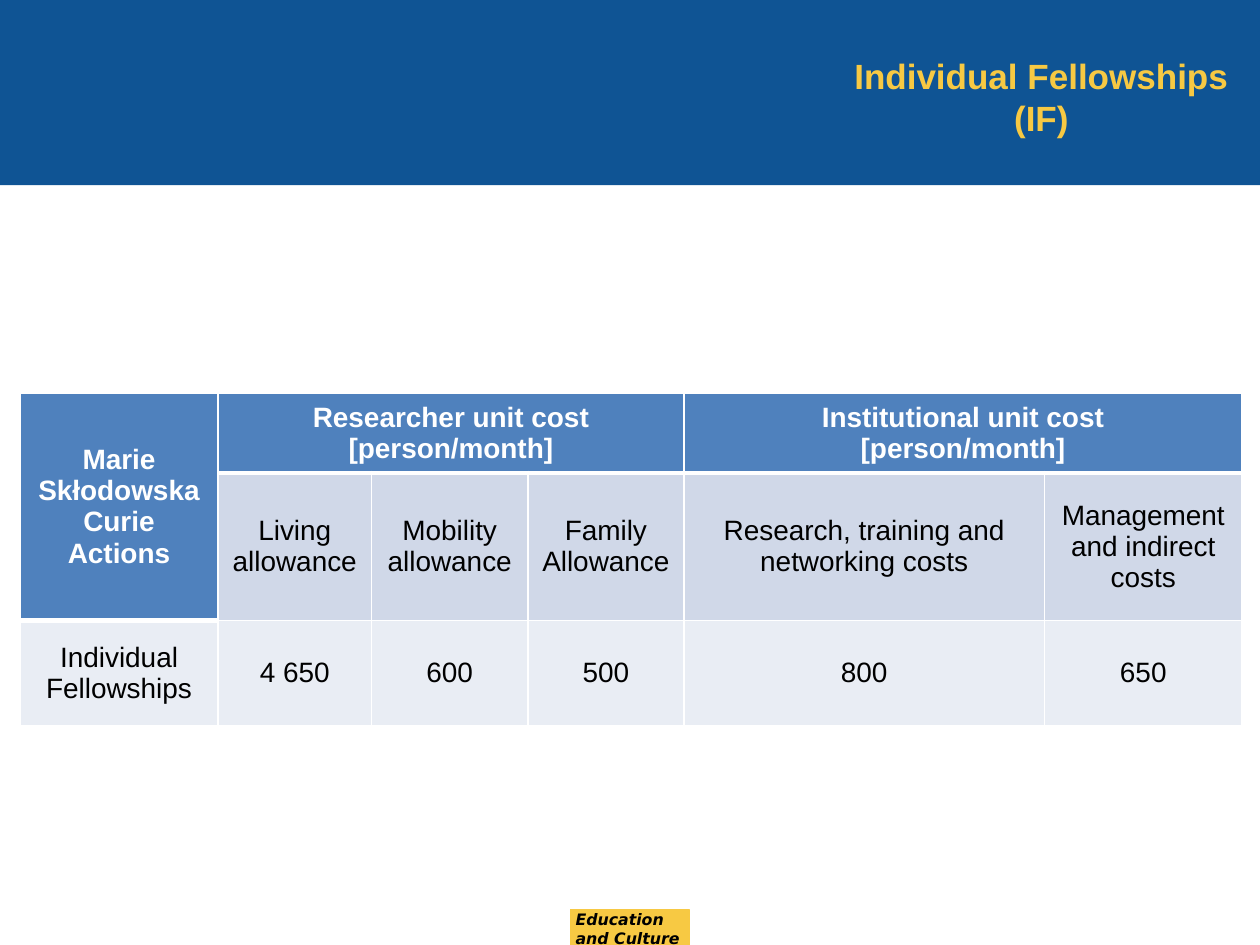
from lxml import etree
from pptx import Presentation
from pptx.dml.color import RGBColor
from pptx.enum.shapes import MSO_SHAPE
from pptx.enum.text import MSO_ANCHOR, PP_ALIGN
from pptx.oxml.ns import qn
from pptx.util import Inches, Pt

RECT = MSO_SHAPE.RECTANGLE
MIDDLE = MSO_ANCHOR.MIDDLE
LEFT, CENTER = PP_ALIGN.LEFT, PP_ALIGN.CENTER

BLUE, GOLD, WHITE, BLACK = "0F5494", "F7C943", "FFFFFF", "000000"
HEAD, DARK, LIGHT = "4F81BD", "D0D8E8", "E9EDF4"

COLS = [1.57, 1.22, 1.24, 1.24, 2.86, 1.57]
ROWS = [0.63, 1.17, 0.84]
# row, column, rows spanned, columns spanned, text
HEADS = [
    (0, 0, 2, 1, "Marie Skłodowska Curie Actions"),
    (0, 1, 1, 3, "Researcher unit cost\n[person/month]"),
    (0, 4, 1, 2, "Institutional unit cost\n[person/month]"),
]
COSTS = ["Living allowance", "Mobility allowance", "Family Allowance",
         "Research, training and networking costs",
         "Management and indirect costs"]
RATES = ["Individual Fellowships", "4 650", "600", "500", "800", "650"]


def color(code):
    return RGBColor.from_string(code)


def write(frame, text, size, code, bold=False, italic=False,
          face="Arial", align=CENTER):
    frame.text = text
    frame.word_wrap = True
    for para in frame.paragraphs:
        para.alignment = align
        for run in para.runs:
            font = run.font
            font.name, font.size = face, Pt(size)
            font.bold, font.italic = bold, italic
            font.color.rgb = color(code)


def add_block(slide, box, code, line=False):
    block = slide.shapes.add_shape(RECT, *map(Inches, box))
    block.shadow.inherit = False
    block.fill.solid()
    block.fill.fore_color.rgb = color(code)
    if line:
        block.line.color.rgb = color(code)
        block.line.width = Pt(0.75)
    else:
        block.line.fill.background()


def add_label(slide, box, text, size, code, **style):
    frame = slide.shapes.add_textbox(*map(Inches, box)).text_frame
    frame.vertical_anchor = MIDDLE
    write(frame, text, size, code, **style)


def add_borders(cell, low):
    """Draw white borders of 1 pt, with the bottom one low points wide."""
    props = cell._tc.get_or_add_tcPr()
    sides = zip(("a:lnL", "a:lnR", "a:lnT", "a:lnB"), (1, 1, 1, low))
    for spot, (side, width) in enumerate(sides):
        line = etree.Element(qn(side), w=str(Pt(width)))
        fill = etree.SubElement(line, qn("a:solidFill"))
        etree.SubElement(fill, qn("a:srgbClr"), val=WHITE)
        props.insert(spot, line)


def fill_cell(cell, text, fill, code=BLACK, bold=False):
    write(cell.text_frame, text, 16, code, bold=bold)
    cell.vertical_anchor = MIDDLE
    cell.fill.solid()
    cell.fill.fore_color.rgb = color(fill)


def add_header(slide, left, top, width, height):
    add_block(slide, (left, top, width, height), BLUE)
    add_label(slide, (left + width - 3.35, top + 0.38, 3.23, 0.77),
              "Individual Fellowships (IF)", 20, GOLD, bold=True)


def add_footer(slide, left, top, width, height):
    add_block(slide, (left, top, width, height), GOLD, line=True)
    add_label(slide, (left - 0.06, top - 0.05, 2.06, 0.4),
              "Education \vand Culture", 9, BLACK, bold=True, italic=True,
              face="DejaVu Sans", align=LEFT)


def add_rates(slide, left, top):
    box = map(Inches, (left, top, sum(COLS), sum(ROWS)))
    table = slide.shapes.add_table(len(ROWS), len(COLS), *box).table
    for col, width in zip(table.columns, COLS):
        col.width = Inches(width)
    for row, height in zip(table.rows, ROWS):
        row.height = Inches(height)

    for row, col, down, across, text in HEADS:
        cell = table.cell(row, col)
        last = table.cell(row + down - 1, col + across - 1)
        cell.merge(last)
        fill_cell(cell, text, HEAD, WHITE, bold=True)
        for r in range(row, row + down):
            for c in range(col, col + across):
                add_borders(table.cell(r, c), 3)

    for row, start, texts, fill in ((1, 1, COSTS, DARK), (2, 0, RATES, LIGHT)):
        for col, text in enumerate(texts, start):
            cell = table.cell(row, col)
            fill_cell(cell, text, fill)
            add_borders(cell, 1)


def main():
    deck = Presentation()
    deck.slide_width, deck.slide_height = Inches(10), Inches(7.5)
    slide = deck.slides.add_slide(deck.slide_layouts[6])
    add_footer(slide, 4.53, 7.22, 0.94, 0.28)
    add_header(slide, 0, 0, 10, 1.47)
    add_rates(slide, 0.16, 3.12)
    deck.save("out.pptx")


if __name__ == "__main__":
    main()
